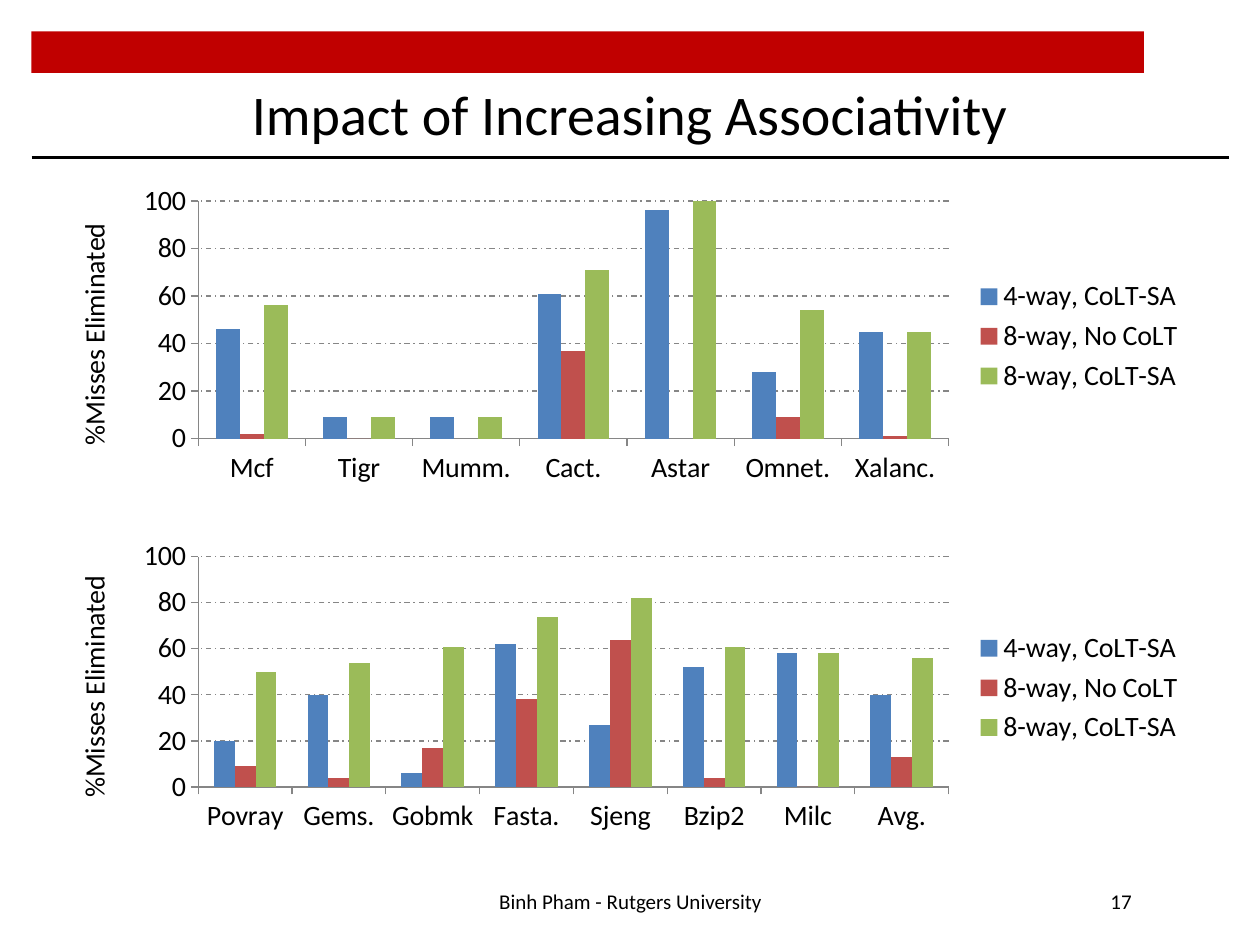
from dataclasses import dataclass

from lxml import etree
from pptx import Presentation
from pptx import util as u
from pptx.chart import data as chart_data
from pptx.dml import color
from pptx.enum import chart as ch, dml, shapes, text
from pptx.oxml import ns


@dataclass(frozen=True)
class Theme:
    """Colours, font and type sizes of the slide."""
    font: str = "Calibri"
    ink: str = "000000"
    banner: str = "C00000"
    grid: str = "868686"
    series: tuple = ("4F81BD", "C0504D", "9BBB59")
    title_size: int = 32
    chart_size: int = 16
    footer_size: int = 12


THEME = Theme()
SERIES_NAMES = ("4-way, CoLT-SA", "8-way, No CoLT", "8-way, CoLT-SA")
TOP_RESULTS = {
    "Mcf": (46, 2, 56), "Tigr": (9, 0, 9), "Mumm.": (9, -1, 9),
    "Cact.": (61, 37, 71), "Astar": (96, -3, 100),
    "Omnet.": (28, 9, 54), "Xalanc.": (45, 1, 45),
}
BOTTOM_RESULTS = {
    "Povray": (20, 9, 50), "Gems.": (40, 4, 54), "Gobmk": (6, 17, 61),
    "Fasta.": (62, 38, 74), "Sjeng": (27, 64, 82), "Bzip2": (52, 4, 61),
    "Milc": (58, 0, 58), "Avg.": (40, 13, 56),
}
PLOT_LAYOUT = {"x": 0.127, "y": 0.07, "w": 0.656, "h": 0.755}


def rgb(value):
    """Return the colour for a hex string."""
    return color.RGBColor.from_string(value)


def inches(*lengths):
    """Convert several lengths to inches."""
    return [u.Inches(length) for length in lengths]


def set_values(target, values):
    """Set each named attribute on the target."""
    for name, value in values.items():
        setattr(target, name, value)


def style_font(font, size):
    """Apply the theme font at the given size."""
    set_values(font, {"name": THEME.font, "size": u.Pt(size), "bold": False})
    font.color.rgb = rgb(THEME.ink)


def style_line(line, hex_color, width):
    """Set the colour and width of a line."""
    line.color.rgb = rgb(hex_color)
    line.width = u.Pt(width)


def add_label(slide, box, wording, size, align):
    """Add one line of text centred vertically in the box."""
    frame = slide.shapes.add_textbox(*inches(*box)).text_frame
    set_values(frame, {"word_wrap": True, "vertical_anchor": text.MSO_ANCHOR.MIDDLE})
    paragraph = frame.paragraphs[0]
    set_values(paragraph, {"text": wording, "alignment": align})
    style_font(paragraph.runs[0].font, size)


def add_header(slide, box):
    """Add the banner, title and rule within the box."""
    left, top, width, height = box
    banner = slide.shapes.add_shape(
        shapes.MSO_SHAPE.RECTANGLE, *inches(left, top, 8.83, 0.33))
    banner.shadow.inherit = False
    banner.fill.solid()
    banner.fill.fore_color.rgb = rgb(THEME.banner)
    banner.line.fill.background()
    bottom = top + height
    rule = slide.shapes.add_connector(
        shapes.MSO_CONNECTOR.STRAIGHT, *inches(left, bottom, left + width, bottom))
    style_line(rule.line, THEME.ink, 1.5)
    etree.SubElement(rule.element.spPr, ns.qn("a:effectLst"))
    add_label(slide, (left + 0.25, top + 0.33, width - 0.5, 0.63),
              "Impact of Increasing Associativity", THEME.title_size, text.PP_ALIGN.CENTER)


def place_plot(chart):
    """Fix the inner plot area as fractions of the chart."""
    plot_area = chart.element.find(".//" + ns.qn("c:plotArea"))
    for old in plot_area.findall(ns.qn("c:layout")):
        plot_area.remove(old)
    layout = etree.Element(ns.qn("c:layout"))
    manual = etree.SubElement(layout, ns.qn("c:manualLayout"))
    settings = {"layoutTarget": "inner", "xMode": "edge", "yMode": "edge", **PLOT_LAYOUT}
    for name, value in settings.items():
        etree.SubElement(manual, ns.qn("c:" + name), val=str(value))
    plot_area.insert(0, layout)


def style_axes(chart):
    """Format both axes, the gridlines and the rotated axis title."""
    value_axis = chart.value_axis
    set_values(value_axis, {"minimum_scale": 0, "maximum_scale": 100, "major_unit": 20,
                            "has_major_gridlines": True, "has_title": True})
    for axis in (chart.category_axis, value_axis):
        set_values(axis, {"major_tick_mark": ch.XL_TICK_MARK.OUTSIDE,
                          "minor_tick_mark": ch.XL_TICK_MARK.NONE,
                          "tick_label_position": ch.XL_TICK_LABEL_POSITION.LOW})
        style_line(axis.format.line, THEME.grid, 0.75)
    grid_line = value_axis.major_gridlines.format.line
    style_line(grid_line, THEME.grid, 0.75)
    grid_line.dash_style = dml.MSO_LINE.DASH_DOT
    frame = value_axis.axis_title.text_frame
    frame.text = "%Misses Eliminated"
    style_font(frame.paragraphs[0].runs[0].font, THEME.chart_size)
    body = value_axis.axis_title.element.find(".//" + ns.qn("a:bodyPr")) \
        if hasattr(value_axis.axis_title, "element") \
        else chart.element.find(".//" + ns.qn("c:valAx") + "//" + ns.qn("a:bodyPr"))
    set_attributes = {"rot": "-5400000", "vert": "horz"}
    for name, value in set_attributes.items():
        body.set(name, value)


def add_results_chart(slide, box, results):
    """Add a clustered column chart of misses eliminated in the box."""
    data = chart_data.CategoryChartData()
    data.categories = list(results)
    for name, values in zip(SERIES_NAMES, zip(*results.values())):
        data.add_series(name, values)
    chart = slide.shapes.add_chart(
        ch.XL_CHART_TYPE.COLUMN_CLUSTERED, *inches(*box), data).chart
    style_font(chart.font, THEME.chart_size)
    set_values(chart, {"has_title": False, "has_legend": True})
    set_values(chart.legend, {"position": ch.XL_LEGEND_POSITION.RIGHT,
                              "include_in_layout": False})
    plot = chart.plots[0]
    set_values(plot, {"gap_width": 150, "overlap": 0, "vary_by_categories": False})
    for series, hex_color in zip(plot.series, THEME.series):
        series.invert_if_negative = False
        series.format.fill.solid()
        series.format.fill.fore_color.rgb = rgb(hex_color)
    style_axes(chart)
    place_plot(chart)


def add_footer(slide, box):
    """Add the author line and the slide number in the box."""
    left, top, width, height = box
    add_label(slide, (left, top, 3.17, height), "Binh Pham - Rutgers University",
              THEME.footer_size, text.PP_ALIGN.CENTER)
    add_label(slide, (left + width - 2.33, top, 2.33, height), "17",
              THEME.footer_size, text.PP_ALIGN.RIGHT)


def main():
    """Build and save the slide."""
    presentation = Presentation()
    set_values(presentation, {"slide_width": u.Inches(10), "slide_height": u.Inches(7.5)})
    slide = presentation.slides.add_slide(presentation.slide_layouts[6])
    add_header(slide, (0.25, 0.25, 9.5, 1))
    add_results_chart(slide, (0.42, 1.42, 9.08, 2.5), TOP_RESULTS)
    add_results_chart(slide, (0.42, 4.25, 9.08, 2.42), BOTTOM_RESULTS)
    add_footer(slide, (3.42, 6.95, 5.66, 0.4))
    presentation.save("out.pptx")


if __name__ == "__main__":
    main()
